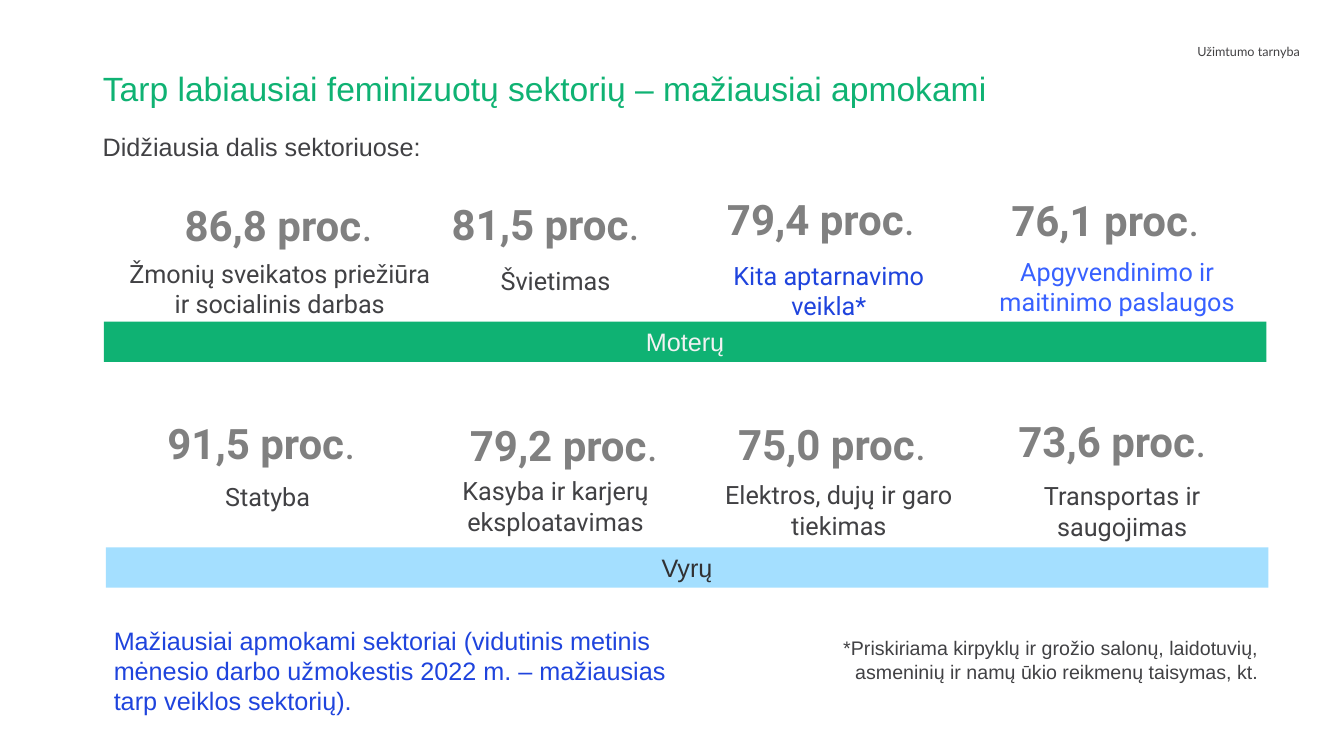
from pptx import Presentation
from pptx.dml.color import RGBColor
from pptx.enum.shapes import MSO_SHAPE
from pptx.enum.text import MSO_ANCHOR, MSO_AUTO_SIZE, PP_ALIGN
from pptx.util import Emu, Pt

PX = 9144  # 100 px to the inch
LEFT, CENTER, RIGHT = PP_ALIGN.LEFT, PP_ALIGN.CENTER, PP_ALIGN.RIGHT
TOP, MIDDLE = MSO_ANCHOR.TOP, MSO_ANCHOR.MIDDLE
RECTANGLE = MSO_SHAPE.RECTANGLE
GROW, FIXED = MSO_AUTO_SIZE.SHAPE_TO_FIT_TEXT, MSO_AUTO_SIZE.NONE
TITLE_ONLY = 5

COLORS = {
    "green": "0FB273", "sky": "A4DFFF", "text": "414144", "header": "434244",
    "share": "808080", "blue": "1F44DD", "bright": "3861FF",
    "light": "F2F2F2", "dark": "313133",
}

SHARE_WIDTH, SHARE_HEIGHT = 273, 61

# share, its left and top; sector, its left, top, width and height; colour
WOMEN_SECTORS = [
    ("86,8 proc", 145, 193, "Žmonių sveikatos priežiūra ir socialinis darbas",
     (114, 251, 327, 71), "text"),
    ("81,5 proc", 410, 192, "Švietimas", (401, 258, 300, 40), "text"),
    ("79,4 proc", 683, 187, "Kita aptarnavimo veikla*",
     (681, 253, 282, 71), "blue"),
    ("76,1 proc", 965, 188, "Apgyvendinimo ir maitinimo paslaugos",
     (958, 249, 300, 71), "bright"),
]
MEN_SECTORS = [
    ("91,5 proc", 128, 409, "Statyba", (102, 473, 327, 40), "text"),
    ("79,2 proc", 428, 411, "Kasyba ir karjerų eksploatavimas",
     (401, 467, 300, 71), "text"),
    ("75,0 proc", 694, 410, "Elektros, dujų ir garo tiekimas",
     (691, 471, 282, 71), "text"),
    ("73,6 proc", 972, 407, "Transportas ir saugojimas",
     (963, 472, 300, 71), "text"),
]


def color(name):
    return RGBColor.from_string(COLORS[name])


def px(*lengths):
    return [Emu(length * PX) for length in lengths]


def write(shape, text, size=18, font="Arial", fill="text", bold=False,
          tail="", align=LEFT, anchor=TOP, fit=GROW, after=0, spacing=1.0):
    """Fill a shape with one paragraph; tail is a closing run that is not bold."""
    frame = shape.text_frame
    frame.word_wrap = True
    frame.auto_size = fit
    frame.vertical_anchor = anchor
    para = frame.paragraphs[0]
    para.alignment = align
    para.space_before, para.space_after = Pt(0), Pt(after)
    para.line_spacing = spacing
    for part, weight in ((text, bold), (tail, False)):
        if part:
            span = para.add_run()
            span.text = part
            span.font.size = Pt(size)
            span.font.name = font
            span.font.bold = weight
            span.font.color.rgb = color(fill)


def add_text(page, area, text, **style):
    write(page.shapes.add_textbox(*px(*area)), text, **style)


def add_band(page, area, text, band, fill):
    box = page.shapes.add_shape(RECTANGLE, *px(*area))
    box.shadow.inherit = False
    box.fill.solid()
    box.fill.fore_color.rgb = color(band)
    box.line.fill.background()
    write(box, text, fill=fill, align=CENTER, anchor=MIDDLE)


def add_sectors(page, sectors):
    for share, left, top, sector, area, fill in sectors:
        add_text(page, area, sector, font="Roboto", fill=fill, align=CENTER)
        add_text(page, (left, top, SHARE_WIDTH, SHARE_HEIGHT), share, tail=". ",
                 size=30, font="Roboto", fill="share", bold=True, align=CENTER)


def add_title(page, area, text):
    title = page.shapes.title
    title.left, title.top, title.width, title.height = px(*area)
    write(title, text, size=24, fill="green", fit=FIXED, spacing=0.9)


def main():
    deck = Presentation()
    deck.slide_width, deck.slide_height = px(1333, 750)
    page = deck.slides.add_slide(deck.slide_layouts[TITLE_ONLY])

    add_text(page, (849, 39, 450, 47), "Užimtumo tarnyba", size=9, font="Lato",
             fill="header", align=RIGHT, fit=FIXED)
    add_title(page, (92, 67, 1127, 56),
              "Tarp labiausiai feminizuotų sektorių – mažiausiai apmokami")
    add_text(page, (92, 125, 371, 40), "Didžiausia dalis sektoriuose:", after=12)

    add_sectors(page, WOMEN_SECTORS)
    add_band(page, (103, 319, 1153, 40), "Moterų", "green", "light")
    add_sectors(page, MEN_SECTORS)
    add_band(page, (105, 543, 1153, 40), "Vyrų", "sky", "dark")

    add_text(page, (103, 615, 592, 101),
             "Mažiausiai apmokami sektoriai (vidutinis metinis mėnesio darbo "
             "užmokestis 2022 m. – mažiausias tarp veiklos sektorių).",
             fill="blue")
    add_text(page, (768, 626, 490, 57),
             "*Priskiriama kirpyklų ir grožio salonų, laidotuvių, asmeninių ir "
             "namų ūkio reikmenų taisymas, kt.", size=14, align=RIGHT)
    deck.save("out.pptx")


if __name__ == "__main__":
    main()
